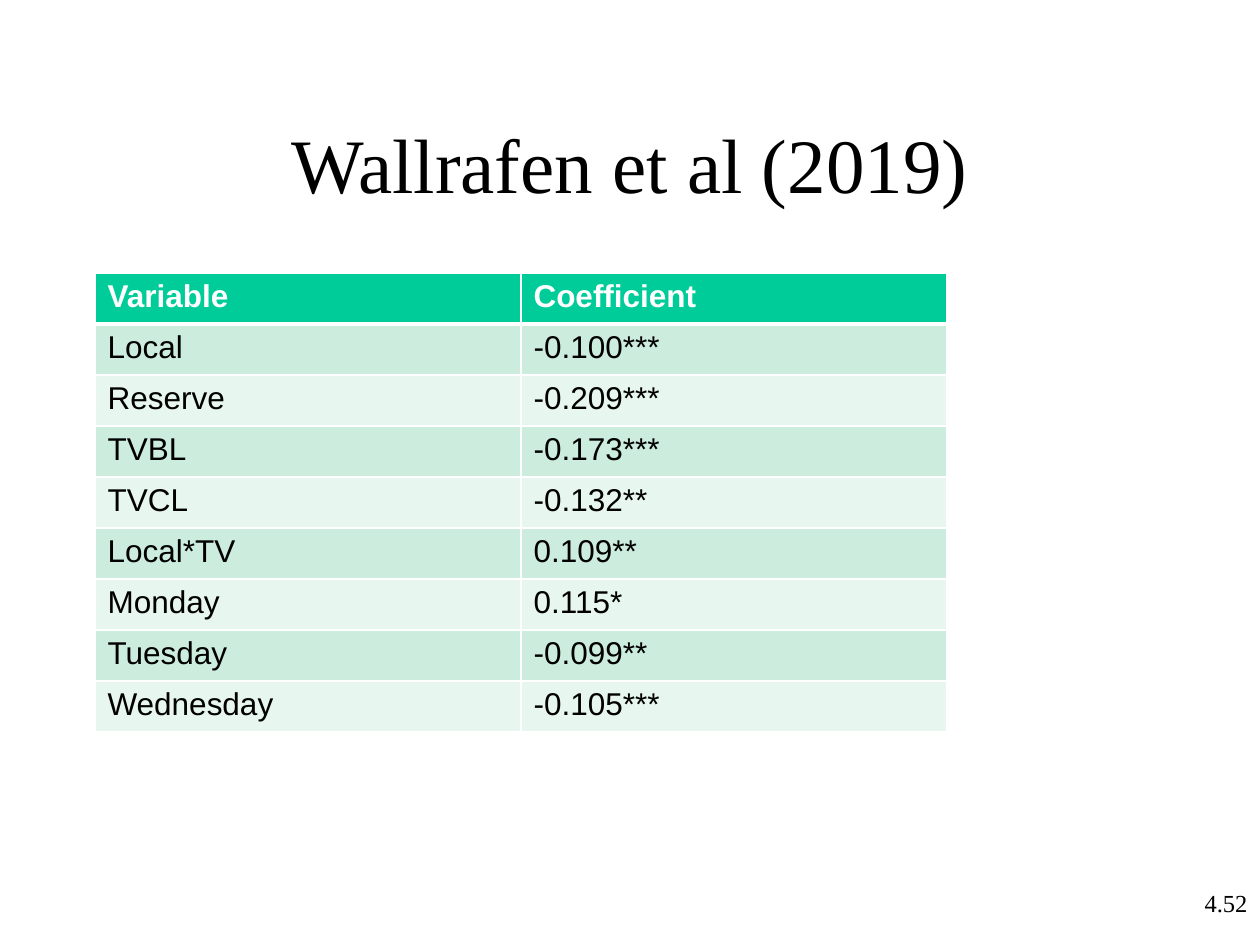
from pptx import Presentation
from pptx.dml.color import RGBColor
from pptx.enum.text import MSO_ANCHOR as Anchor, PP_ALIGN as Align
from pptx.oxml.ns import qn
from pptx.util import Pt
from lxml.etree import SubElement

PX = 914400 // 126  # EMU per px
SANS, SERIF = "Arial", "Times New Roman"
BLACK = RGBColor(0x00, 0x00, 0x00)
WHITE = RGBColor(0xFF, 0xFF, 0xFF)
HEADER_GREEN = RGBColor(0x00, 0xCC, 0x99)
BANDS = (RGBColor(0xE7, 0xF6, 0xEF), RGBColor(0xCC, 0xEC, 0xDE))

COEFFICIENTS = [
    ("Variable", "Coefficient"),
    ("Local", "-0.100***"),
    ("Reserve", "-0.209***"),
    ("TVBL", "-0.173***"),
    ("TVCL", "-0.132**"),
    ("Local*TV", "0.109**"),
    ("Monday", "0.115*"),
    ("Tuesday", "-0.099**"),
    ("Wednesday", "-0.105***"),
]
COLUMN_WIDTH, ROW_HEIGHT = 426, 51


def px(*lengths):
    return [length * PX for length in lengths]


def style(paragraph, face, size, color, bold=False):
    font = paragraph.font
    font.name, font.size, font.bold = face, Pt(size), bold
    font.color.rgb = color


def add_label(slide, text, box, size, align, anchor):
    frame = slide.shapes.add_textbox(*px(*box)).text_frame
    frame.word_wrap = True
    frame.vertical_anchor = anchor
    label = frame.paragraphs[0]
    label.text, label.alignment = text, align
    style(label, SERIF, size, BLACK)


def set_borders(cell, **widths):
    properties = cell._tc.get_or_add_tcPr()
    for side in "LRTB":
        width = Pt(widths.get(side, 1))
        line = SubElement(properties, qn(f"a:ln{side}"), w=str(width))
        fill = SubElement(line, qn("a:solidFill"))
        SubElement(fill, qn("a:srgbClr"), val=str(WHITE))


def fill_cell(cell, text, row):
    header = row == 0
    # The rule under the header is thicker than the rest
    set_borders(cell, T=3 if row == 1 else 1, B=3 if header else 1)
    cell.fill.solid()
    cell.fill.fore_color.rgb = HEADER_GREEN if header else BANDS[row % 2]
    cell.text = text
    style(cell.text_frame.paragraphs[0], SANS, 18,
          WHITE if header else BLACK, header)


def add_coefficient_table(slide, left, top):
    rows, columns = len(COEFFICIENTS), len(COEFFICIENTS[0])
    size = columns * COLUMN_WIDTH, rows * ROW_HEIGHT
    table = slide.shapes.add_table(rows, columns, *px(left, top, *size)).table
    for row, values in enumerate(COEFFICIENTS):
        for column, value in enumerate(values):
            fill_cell(table.cell(row, column), value, row)


def main():
    deck = Presentation()
    deck.slide_width, deck.slide_height = px(1260, 945)
    slide = deck.slides.add_slide(deck.slide_layouts[6])

    # Title
    add_label(slide, "Wallrafen et al (2019)", (95, 84, 1070, 158), 44,
              Align.CENTER, Anchor.MIDDLE)
    # Regression results
    add_coefficient_table(slide, 95, 273)
    # Page number
    add_label(slide, "4.52", (998, 882, 262, 63), 14, Align.RIGHT, Anchor.TOP)

    deck.save("out.pptx")


if __name__ == "__main__":
    main()
